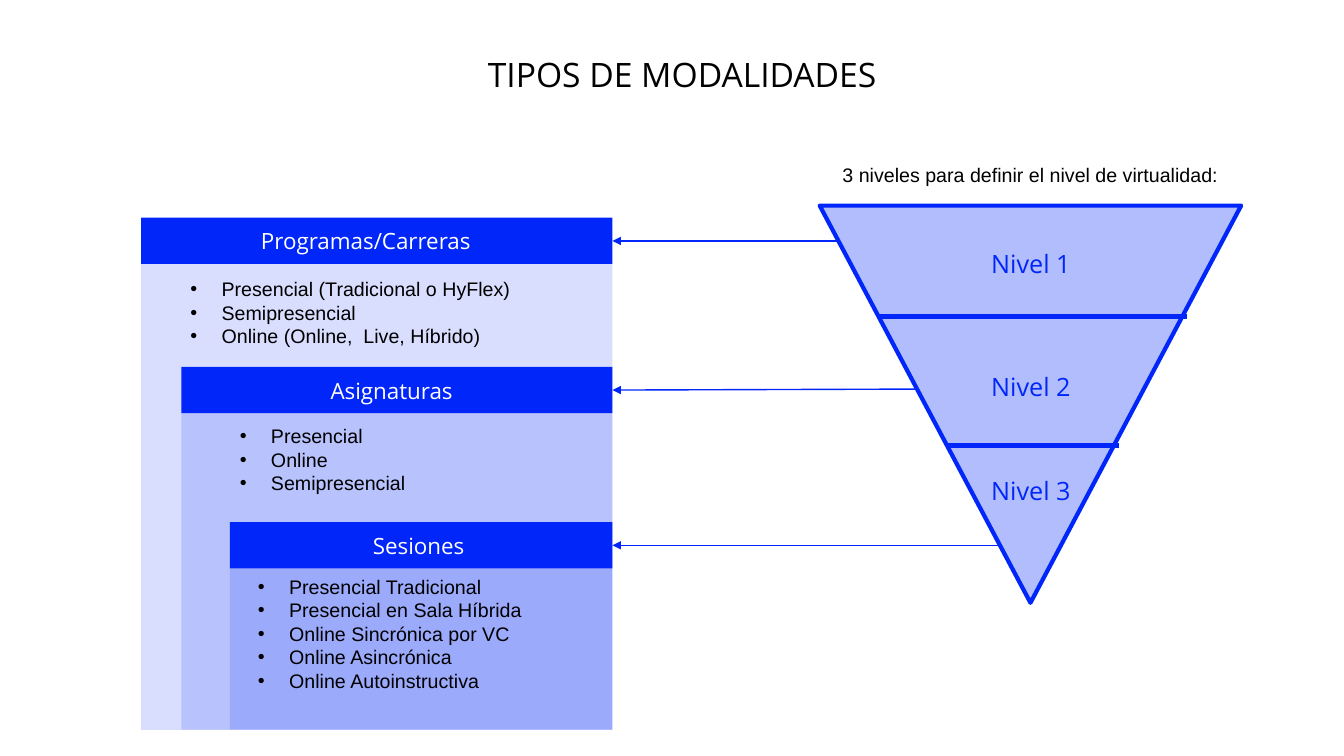
import dataclasses

import pptx
import pptx.dml.color
import pptx.enum.shapes
import pptx.enum.text
import pptx.oxml
import pptx.oxml.ns
import pptx.util
from lxml import etree

SHAPES = pptx.enum.shapes.MSO_SHAPE
ALIGN = pptx.enum.text.PP_ALIGN


@dataclasses.dataclass(frozen=True)
class Theme:
    blue: str = "0026FA"
    black: str = "000000"
    white: str = "FFFFFF"
    heading_font: str = "Open Sans"
    body_font: str = "Arial"
    title_size: int = 24
    level_size: int = 18
    header_size: int = 16
    body_size: int = 14
    panel_opacity: int = 15
    funnel_opacity: int = 30
    thick: int = 3
    thin: int = 1


THEME = Theme()

# Grid: ten columns or rows to the inch
COLUMNS, ROWS = 133.3, 75
PANEL_RIGHT, PANEL_BOTTOM = 60.75, 72.4
HEADER_HEIGHT = 4.6

# Panel left, header top, label box, list box, label, items
MODALITIES = [
    (14, 21.6, (24.9, 22, 23.9, 3.7), (17.9, 27, 34, 8.1), "Programas/Carreras",
     ["Presencial (Tradicional o HyFlex)", "Semipresencial",
      "Online (Online,  Live, Híbrido)"]),
    (18, 36.4, (31.8, 36.9, 14.8, 3.7), (22.8, 41.6, 18.6, 8.1), "Asignaturas",
     ["Presencial", "Online", "Semipresencial"]),
    (22.8, 51.8, (36, 52.3, 11.4, 3.7), (24.6, 56.5, 28.4, 12.8), "Sesiones",
     ["Presencial Tradicional", "Presencial en Sala Híbrida",
      "Online Sincrónica por VC", "Online Asincrónica",
      "Online Autoinstructiva"]),
]

# Label, label top, arrow start
LEVELS = [
    ("Nivel 1", 24.1, (83.2, 23.9)),
    ("Nivel 2", 36.3, (91, 38.6)),
    ("Nivel 3", 46.7, (99.2, 54.1)),
]
# Left, right, row
DIVIDERS = [(87.1, 117.7, 31.4), (93.8, 111, 44.2)]


def grid(*cells):
    return [pptx.util.Inches(cell / 10) for cell in cells]


def rgb(colour):
    return pptx.dml.color.RGBColor.from_string(colour)


def add_block(slide, preset, box, opacity=100):
    block = slide.shapes.add_shape(preset, *grid(*box))
    block.shadow.inherit = False
    block.fill.solid()
    block.fill.fore_color.rgb = rgb(THEME.blue)
    block.line.fill.background()
    if opacity < 100:
        tint = block.fill._xPr.find(".//" + pptx.oxml.ns.qn("a:srgbClr"))
        alpha = etree.SubElement(tint, pptx.oxml.ns.qn("a:alpha"))
        alpha.set("val", str(opacity * 1000))
    return block


def add_bullet(paragraph):
    properties = paragraph._p.get_or_add_pPr()
    indent = pptx.util.Inches(0.31)
    properties.set("marL", str(indent))
    properties.set("indent", str(-indent))
    colour = etree.SubElement(properties, pptx.oxml.ns.qn("a:buClr"))
    etree.SubElement(colour, pptx.oxml.ns.qn("a:srgbClr")).set("val", THEME.black)
    etree.SubElement(properties, pptx.oxml.ns.qn("a:buFont")).set("typeface", THEME.body_font)
    etree.SubElement(properties, pptx.oxml.ns.qn("a:buChar")).set("char", "•")


def add_text(slide, box, lines, size, font, colour, align=ALIGN.LEFT, bulleted=False):
    frame = slide.shapes.add_textbox(*grid(*box)).text_frame
    frame.word_wrap = False
    frame.auto_size = pptx.enum.text.MSO_AUTO_SIZE.SHAPE_TO_FIT_TEXT
    for index, line in enumerate(lines):
        paragraph = frame.paragraphs[0] if index == 0 else frame.add_paragraph()
        paragraph.alignment = align
        if bulleted:
            add_bullet(paragraph)
        run = paragraph.add_run()
        run.text = line
        run.font.size = pptx.util.Pt(size)
        run.font.name = font
        run.font.color.rgb = rgb(colour)


def add_line(slide, start, end, width):
    line = slide.shapes.add_connector(
        pptx.enum.shapes.MSO_CONNECTOR.STRAIGHT, *grid(*start, *end))
    line.line.color.rgb = rgb(THEME.blue)
    line.line.width = pptx.util.Pt(width)
    etree.SubElement(line._element.spPr, pptx.oxml.ns.qn("a:effectLst"))
    return line


def add_arrow(slide, start, end, header):
    arrow = add_line(slide, start, end, THEME.thin)
    arrow.end_connect(header, 3)
    tail = etree.SubElement(arrow.line._get_or_add_ln(), pptx.oxml.ns.qn("a:tailEnd"))
    tail.set("type", "triangle")


def add_modalities(slide):
    """Draw the nested panels and return their headers."""
    for left, top, *_ in MODALITIES:
        panel_top = top + HEADER_HEIGHT
        add_block(slide, SHAPES.RECTANGLE,
                  (left, panel_top, PANEL_RIGHT - left, PANEL_BOTTOM - panel_top),
                  THEME.panel_opacity)
    headers = []
    for left, top, label_box, list_box, label, items in MODALITIES:
        headers.append(add_block(slide, SHAPES.RECTANGLE,
                                 (left, top, PANEL_RIGHT - left, HEADER_HEIGHT)))
        add_text(slide, label_box, [label], THEME.header_size,
                 THEME.heading_font, THEME.white)
        add_text(slide, list_box, items, THEME.body_size,
                 THEME.body_font, THEME.black, bulleted=True)
    return headers


def add_funnel(slide, headers):
    funnel = add_block(slide, SHAPES.ISOSCELES_TRIANGLE, (81.3, 20.4, 41.8, 39.4),
                       THEME.funnel_opacity)
    funnel.rotation = 180
    funnel.line.color.rgb = rgb(THEME.blue)
    funnel.line.width = pptx.util.Pt(THEME.thick)
    for left, right, row in DIVIDERS:
        add_line(slide, (right, row), (left, row), THEME.thick)
    for (label, top, start), header, modality in zip(LEVELS, headers, MODALITIES):
        add_text(slide, (97.1, top, 10.3, 4), [label], THEME.level_size,
                 THEME.heading_font, THEME.blue, ALIGN.CENTER)
        end = (PANEL_RIGHT, modality[1] + HEADER_HEIGHT / 2)
        add_arrow(slide, start, end, header)


def main():
    deck = pptx.Presentation()
    deck.slide_width, deck.slide_height = grid(COLUMNS, ROWS)
    slide = deck.slides.add_slide(deck.slide_layouts[6])

    # Title and caption
    add_text(slide, (47.4, 4.9, 41.8, 5), ["TIPOS DE MODALIDADES"],
             THEME.title_size, THEME.heading_font, THEME.black)
    add_text(slide, (82.5, 15.7, 39.4, 3.4),
             ["3 niveles para definir el nivel de virtualidad:"],
             THEME.body_size, THEME.body_font, THEME.black, ALIGN.CENTER)

    # Nested modalities and the levels that point at them
    headers = add_modalities(slide)
    add_funnel(slide, headers)

    deck.save("out.pptx")


if __name__ == "__main__":
    main()
